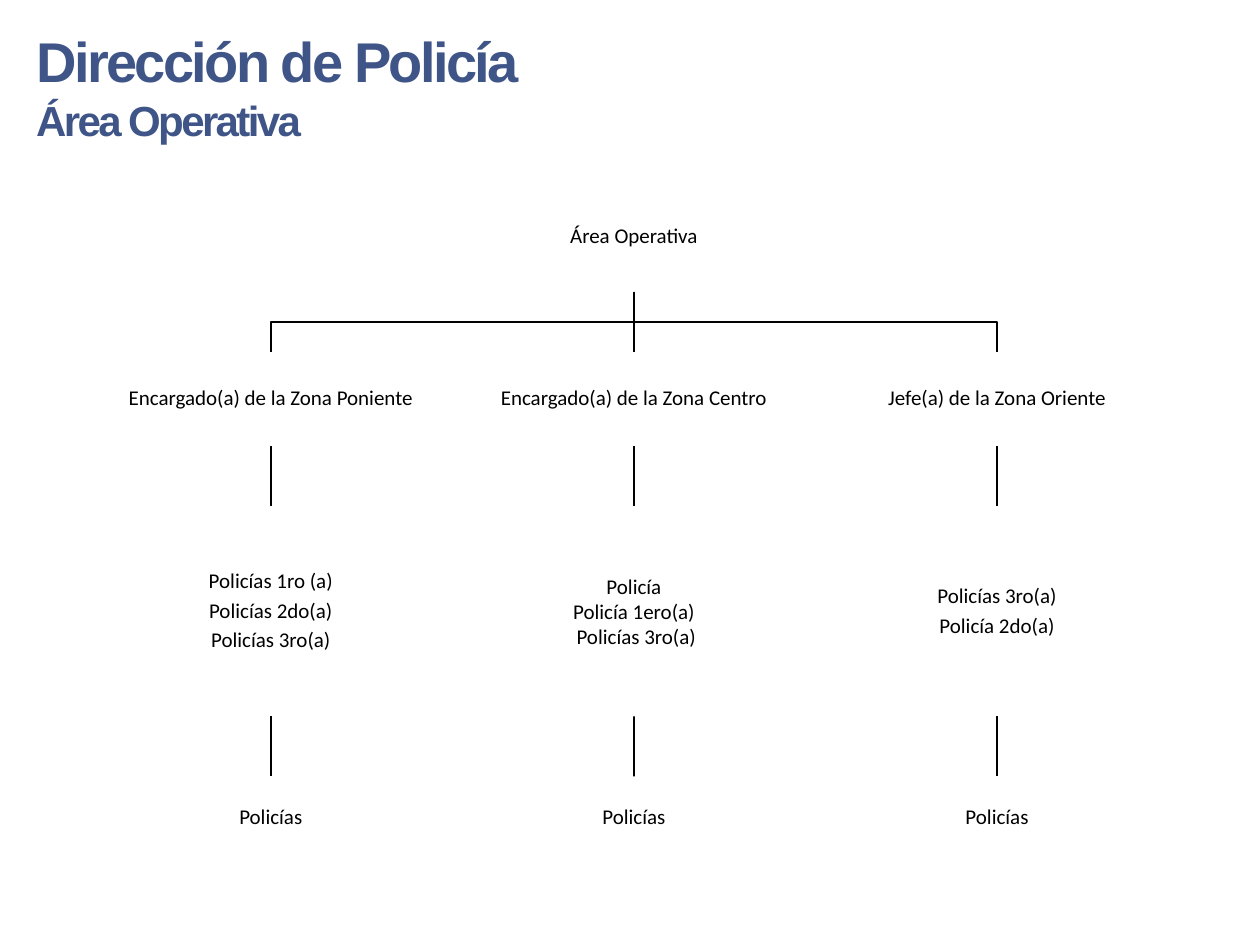
"""Builds the organisation chart slide of the operative area."""
from dataclasses import dataclass

from lxml.etree import SubElement
from pptx import Presentation
from pptx.dml.color import RGBColor
from pptx.enum.shapes import MSO_CONNECTOR as Connector, MSO_SHAPE as Preset
from pptx.enum.text import MSO_ANCHOR as Anchor, MSO_AUTO_SIZE as AutoSize, PP_ALIGN as Align
from pptx.oxml.ns import qn
from pptx.shapes.autoshape import Shape
from pptx.slide import Slide
from pptx.util import Cm, Pt

BLACK = RGBColor(0x00, 0x00, 0x00)
WHITE = RGBColor(0xFF, 0xFF, 0xFF)
BLUE = RGBColor(0x3F, 0x55, 0x88)

CHART_CENTER = 12.78
COLUMN_STEP = 7.32
CHART_TOP = 3.68
LEVEL_GAP = 1.21
LINE_WIDTH = Pt(1)


@dataclass(frozen=True)
class Level:
    """Size in centimetres of the boxes on one level."""
    width: float
    height: float


@dataclass(frozen=True)
class Zone:
    """One column of the chart."""
    head: str
    ranks: tuple[str, ...]
    base: str = "Policías"
    tight_ranks: bool = False


ROOT_LEVEL = Level(6.4, 2.2)
ZONE_LEVELS = (Level(5.8, 1.91), Level(5.28, 4.23), Level(6.1, 1.68))
ZONES = (
    Zone("Encargado(a) de la Zona Poniente",
         ("Policías 1ro (a)", "Policías 2do(a)", "Policías 3ro(a)")),
    Zone("Encargado(a) de la Zona Centro",
         ("Policía", "Policía 1ero(a)", " Policías 3ro(a)"), tight_ranks=True),
    Zone("Jefe(a) de la Zona Oriente", ("Policías 3ro(a)", "Policía 2do(a)")),
)


def write_text(shape: Shape, lines: tuple[str, ...], *, sizes: tuple[float, ...] = (12,),
               font: str = "Calibri", color: RGBColor = BLACK, bold: bool = False,
               align: Align = Align.CENTER, anchor: Anchor = Anchor.MIDDLE,
               inset: float = 0.03, line_spacing: float = 0.9,
               space_after: float = 4, tracking: int = 0) -> None:
    """Fill a shape with one paragraph per line; the last size serves the rest."""
    frame = shape.text_frame
    frame.word_wrap = True
    frame.auto_size = AutoSize.NONE
    frame.vertical_anchor = anchor
    frame.margin_left = frame.margin_right = Cm(inset)
    frame.margin_top = frame.margin_bottom = Cm(min(inset, 0.13))
    for index, line in enumerate(lines):
        paragraph = frame.paragraphs[0] if index == 0 else frame.add_paragraph()
        paragraph.alignment = align
        paragraph.line_spacing = line_spacing
        paragraph.space_before = Pt(0)
        paragraph.space_after = Pt(space_after)
        run = paragraph.add_run()
        run.text = line
        run.font.name = font
        run.font.size = Pt(sizes[min(index, len(sizes) - 1)])
        run.font.bold = bold
        run.font.color.rgb = color
        if tracking:
            run.font._element.set("spc", str(tracking))


def add_box(slide: Slide, center: float, top: float, level: Level,
            lines: tuple[str, ...], **text_format) -> Shape:
    """Add a white box centred on a column."""
    box = slide.shapes.add_shape(Preset.RECTANGLE, Cm(center - level.width / 2), Cm(top),
                                 Cm(level.width), Cm(level.height))
    box.shadow.inherit = False
    box.fill.solid()
    box.fill.fore_color.rgb = WHITE
    box.line.fill.background()
    write_text(box, lines, **text_format)
    return box


def join_down(slide: Slide, upper: Shape, lower: Shape) -> None:
    """Join the bottom of one box to the top of the box below it."""
    connector = slide.shapes.add_connector(Connector.STRAIGHT, 0, 0, 0, 0)
    connector.begin_connect(upper, 2)
    connector.end_connect(lower, 0)
    connector.line.color.rgb = BLACK
    connector.line.width = LINE_WIDTH
    SubElement(connector._element.spPr, qn("a:effectLst"))


def branch_down(slide: Slide, center: float, top: float) -> None:
    """Draw the bent branch from the root to a side column."""
    middle, bottom = top + LEVEL_GAP / 2, top + LEVEL_GAP
    builder = slide.shapes.build_freeform(Cm(CHART_CENTER), Cm(top))
    builder.add_line_segments([(Cm(CHART_CENTER), Cm(middle)), (Cm(center), Cm(middle)),
                               (Cm(center), Cm(bottom))], close=False)
    branch = builder.convert_to_shape()
    branch.shadow.inherit = False
    branch.fill.background()
    branch.line.color.rgb = BLACK
    branch.line.width = LINE_WIDTH


def add_zone(slide: Slide, zone: Zone, center: float, top: float) -> Shape:
    """Draw a column of joined boxes and return its head."""
    tight = {"line_spacing": 1.0, "space_after": 0} if zone.tight_ranks else {}
    contents = (((zone.head,), {}), (zone.ranks, tight), ((zone.base,), {}))
    boxes = []
    for level, (lines, text_format) in zip(ZONE_LEVELS, contents):
        boxes.append(add_box(slide, center, top, level, lines, **text_format))
        top += level.height + LEVEL_GAP
    for upper, lower in zip(boxes, boxes[1:]):
        join_down(slide, upper, lower)
    return boxes[0]


def main() -> None:
    """Build and save the presentation."""
    presentation = Presentation()
    presentation.slide_width, presentation.slide_height = Cm(25.4), Cm(19.05)
    slide = presentation.slides.add_slide(presentation.slide_layouts[5])

    title = slide.shapes.title
    title.left, title.top, title.width, title.height = Cm(0.48), Cm(0.41), Cm(18.95), Cm(2.64)
    write_text(title, ("Dirección de Policía", "Área Operativa"), sizes=(32, 24),
               font="Arial", color=BLUE, bold=True, align=Align.LEFT, anchor=Anchor.TOP,
               inset=0.25, line_spacing=1.0, space_after=0, tracking=-150)

    root = add_box(slide, CHART_CENTER, CHART_TOP, ROOT_LEVEL, ("Área Operativa",))
    root_bottom = CHART_TOP + ROOT_LEVEL.height
    for column, zone in enumerate(ZONES, start=-1):
        center = CHART_CENTER + column * COLUMN_STEP
        head = add_zone(slide, zone, center, root_bottom + LEVEL_GAP)
        if column == 0:
            join_down(slide, root, head)
        else:
            branch_down(slide, center, root_bottom)

    presentation.save("out.pptx")


if __name__ == "__main__":
    main()
